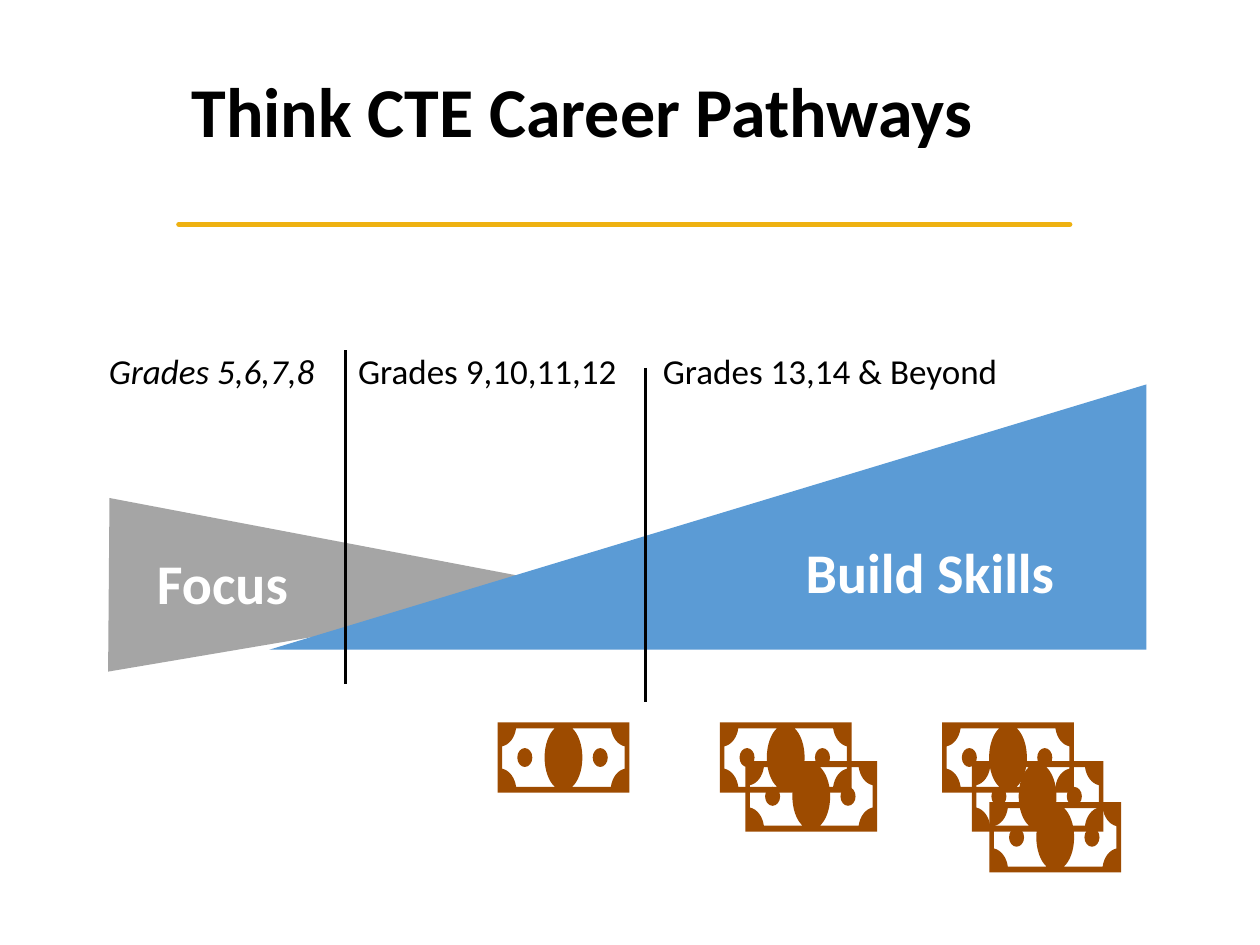
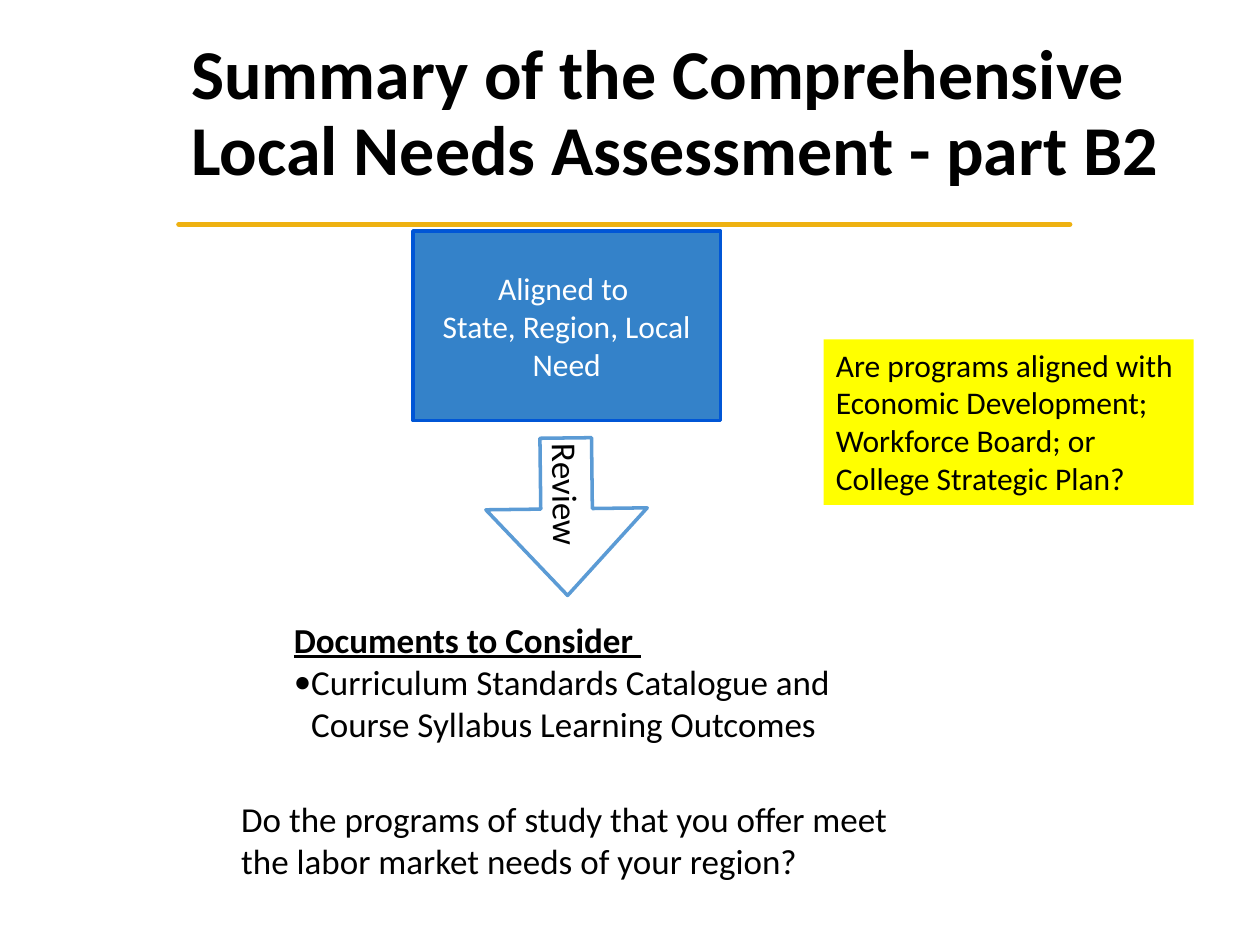
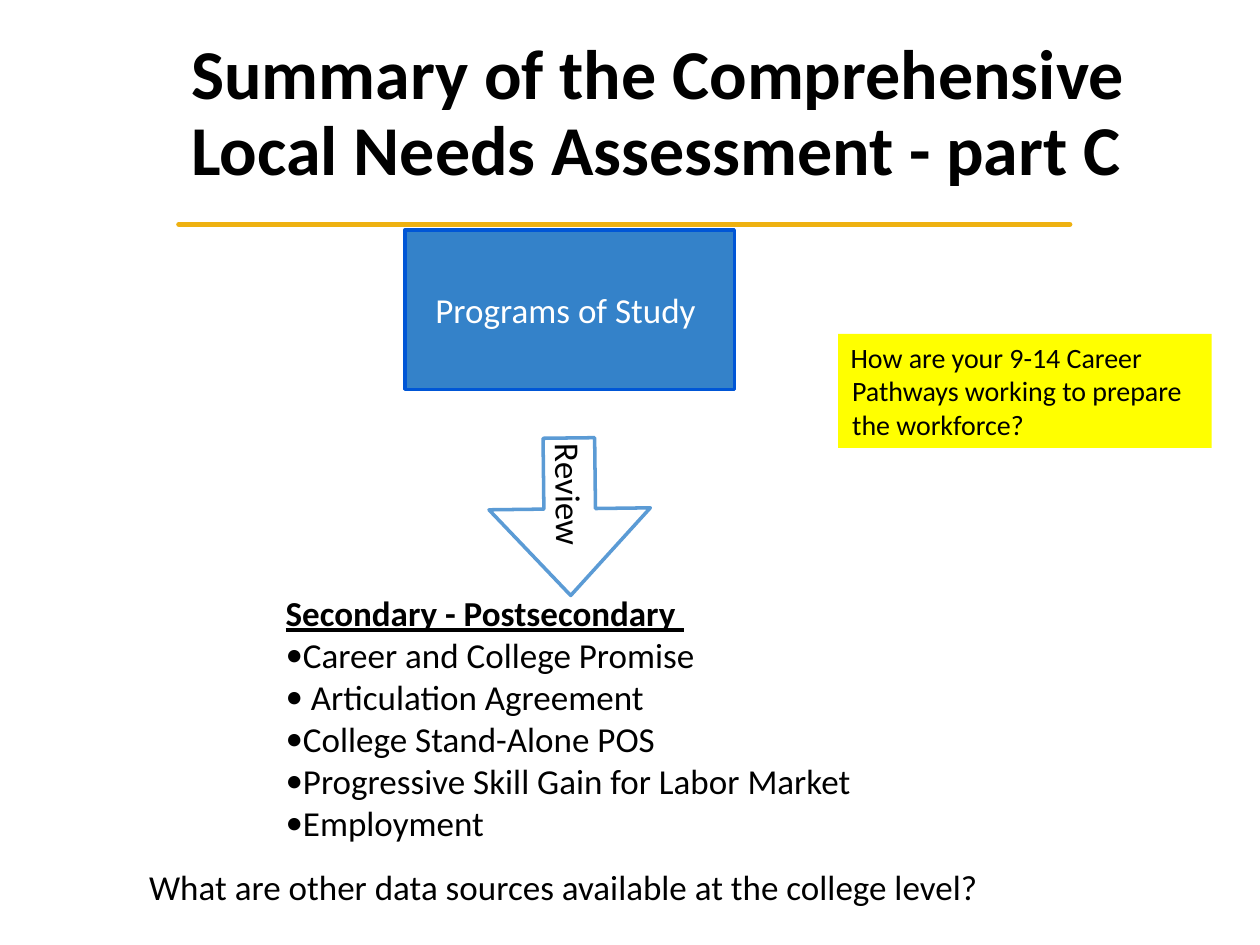
from lxml import etree
from pptx import Presentation
from pptx.dml.color import RGBColor
from pptx.enum.shapes import MSO_CONNECTOR, MSO_SHAPE
from pptx.enum.text import MSO_ANCHOR, PP_ALIGN
from pptx.oxml.ns import qn
from pptx.util import Pt

STRAIGHT = MSO_CONNECTOR.STRAIGHT
RECTANGLE = MSO_SHAPE.RECTANGLE
RIGHT_ARROW = MSO_SHAPE.RIGHT_ARROW
TOP, MIDDLE = MSO_ANCHOR.TOP, MSO_ANCHOR.MIDDLE
LEFT, CENTER = PP_ALIGN.LEFT, PP_ALIGN.CENTER
TITLE_ONLY = 5

COLORS = {
    "text": "000000",
    "light": "FFFFFF",
    "rule": "EEB111",
    "focus": "A5A5A5",
    "skills": "5B9BD5",
    "money": "9D4B00",
    "topic": "3482C9",
    "topic_edge": "0056D6",
    "question": "FFFF00",
}
BODY = {"name": "Calibri", "size": Pt(20), "bold": False}
TITLE = {**BODY, "size": Pt(40), "bold": True}
WEDGE_LABEL = {**BODY, "size": Pt(32), "bold": True}
HEADING = {**BODY, "bold": True, "underline": True}
SMALL = {**BODY, "size": Pt(18)}
INSETS, WIDE_INSETS = (3.2, 3.2), (7.2, 3.6)

NOTE_WIDTH, NOTE_HEIGHT = 75.2, 40.2
NOTE_STACKS = [
    [(284.4, 412.8)],
    [(411.4, 412.8), (426, 435)],
    [(538.4, 412.8), (555.3, 435), (565.4, 458.4)],
]


def color(name):
    return RGBColor.from_string(COLORS[name])


def paint(shape, fill, edge=None):
    shape.shadow.inherit = False
    shape.fill.solid()
    shape.fill.fore_color.rgb = color(fill)
    if edge:
        shape.line.color.rgb = color(edge)
        shape.line.width = Pt(2)
    else:
        shape.line.fill.background()


def set_frame(box, insets, anchor, wrap=True):
    across, down = map(Pt, insets)
    settings = {
        "word_wrap": wrap, "vertical_anchor": anchor,
        "margin_left": across, "margin_right": across,
        "margin_top": down, "margin_bottom": down,
    }
    for name, value in settings.items():
        setattr(box.text_frame, name, value)


def write(para, text, look, ink="text", align=LEFT):
    para.alignment = align
    span = para.add_run()
    span.text = text
    for name, value in look.items():
        setattr(span.font, name, value)
    span.font.color.rgb = color(ink)


def hang(para, indent):
    properties = para._p.get_or_add_pPr()
    properties.set("marL", str(Pt(indent)))
    properties.set("indent", str(-Pt(indent)))
    return properties


def add_text(page, area, text, look=BODY, ink="text", insets=INSETS, anchor=MIDDLE, wrap=True):
    box = page.shapes.add_textbox(*map(Pt, area))
    set_frame(box, insets, anchor, wrap)
    write(box.text_frame.paragraphs[0], text, look, ink)
    return box


def add_list(page, area, heading, items, indent):
    box = add_text(page, area, heading, HEADING)
    for item in items:
        para = box.text_frame.add_paragraph()
        properties = hang(para, indent)
        etree.SubElement(properties, qn("a:buFont")).set("typeface", "Calibri")
        etree.SubElement(properties, qn("a:buChar")).set("char", "•")
        write(para, item, BODY)


def add_topic(page, area, lines, look):
    box = page.shapes.add_shape(RECTANGLE, *map(Pt, area))
    paint(box, "topic", "topic_edge")
    set_frame(box, INSETS, MIDDLE)
    frame = box.text_frame
    for index, line in enumerate(lines):
        para = frame.add_paragraph() if index else frame.paragraphs[0]
        write(para, line, look, "light", CENTER)


def add_question(page, area, text, look, indent=0):
    box = page.shapes.add_shape(RECTANGLE, *map(Pt, area))
    paint(box, "question")
    set_frame(box, WIDE_INSETS, TOP)
    para = box.text_frame.paragraphs[0]
    if indent:
        hang(para, indent)
    write(para, text, look)


def add_review_arrow(page, left):
    arrow = page.shapes.add_shape(RIGHT_ARROW, Pt(left), Pt(249.2), Pt(90), Pt(92.2))
    arrow.rotation = 89.3
    arrow.adjustments[0] = 0.32
    arrow.adjustments[1] = 0.55
    paint(arrow, "light", "skills")
    set_frame(arrow, INSETS, MIDDLE)
    write(arrow.text_frame.paragraphs[0], "Review", BODY)


def add_line(page, start, end, ink, width, cap="flat"):
    line = page.shapes.add_connector(STRAIGHT, *map(Pt, start + end))
    line.line.color.rgb = color(ink)
    line.line.width = Pt(width)
    properties = line._element.spPr
    properties.find(qn("a:ln")).set("cap", cap)
    etree.SubElement(properties, qn("a:effectLst"))


def add_outline(page, contours, fill):
    builder = None
    for contour in contours:
        points = [(Pt(x), Pt(y)) for x, y, *_ in contour]
        if builder is None:
            builder = page.shapes.build_freeform(*points[0])
        else:
            builder.move_to(*points[0])
        builder.add_line_segments(points[1:], close=True)
    shape = builder.convert_to_shape()
    paint(shape, fill)
    bend(shape, [len(point) > 2 for contour in contours for point in contour[1:]])


def bend(shape, curved):
    segments = list(shape._element.iter(qn("a:lnTo")))
    controls = [segment for segment, flag in zip(segments, curved) if flag]
    for first in range(0, len(controls), 3):
        curve = etree.Element(qn("a:cubicBezTo"))
        controls[first].addprevious(curve)
        for segment in controls[first:first + 3]:
            curve.append(segment[0])
            segment.getparent().remove(segment)


def curve(*points):
    return [(x, y, "curve") for x, y in points]


def oval(x, y, across, down):
    reach, rise = across * 0.55, down * 0.55
    return [(x, y - down)] + curve(
        (x - reach, y - down), (x - across, y - rise), (x - across, y),
        (x - across, y + rise), (x - reach, y + down), (x, y + down),
        (x + reach, y + down), (x + across, y + rise), (x + across, y),
        (x + across, y - rise), (x + reach, y - down), (x, y - down))


def note_contours():
    edge = [(0, 0), (0, NOTE_HEIGHT), (NOTE_WIDTH, NOTE_HEIGHT), (NOTE_WIDTH, 0)]
    window = [(10.5, 3.4), (32.6, 3.4)]
    window += curve((29.2, 6.4), (26.8, 12.8), (26.8, 20.1),
                    (26.8, 27.4), (29.2, 33.8), (32.6, 36.8))
    window += [(10.5, 36.8)]
    window += curve((9.8, 31.6), (6.7, 27.4), (2.6, 26.5))
    window += [(2.6, 13.7)]
    window += curve((6.7, 12.8), (9.8, 8.6), (10.5, 3.4))
    mirrored = [(NOTE_WIDTH - x, *rest) for x, *rest in window]
    return [edge, window, mirrored, oval(15.5, 20.1, 4.3, 5.4), oval(58.6, 20.1, 4.3, 5.4)]


def add_note(page, left, top):
    contours = [[(left + x, top + y, *kind) for x, y, *kind in contour]
                for contour in note_contours()]
    add_outline(page, contours, "money")


def add_page(deck, title):
    page = deck.slides.add_slide(deck.slide_layouts[TITLE_ONLY])
    box = page.shapes.title
    area = {"left": 102.2, "top": 13.3, "width": 579.6, "height": 104.4}
    for name, value in area.items():
        setattr(box, name, Pt(value))
    set_frame(box, WIDE_INSETS, MIDDLE)
    para = box.text_frame.paragraphs[0]
    para.line_spacing = 0.9
    write(para, title, TITLE)
    add_line(page, (102.2, 128.2), (611.3, 128.2), "rule", 3, "rnd")
    return page


def build_pathways(deck):
    page = add_page(deck, "Think CTE Career Pathways")
    add_outline(page, [[(338.4, 337), (61.8, 383.8), (62.6, 284.6)]], "focus")
    add_outline(page, [[(153.8, 371.3), (655, 371.3), (655, 219.7)]], "skills")
    grades = [
        (59, 125, "Grades 5,6,7,8", {**BODY, "italic": True}),
        (201.4, 154.8, "Grades 9,10,11,12", BODY),
        (375.6, 198.7, "Grades 13,14 & Beyond", BODY),
    ]
    for left, width, text, look in grades:
        add_text(page, (left, 196.6, width, 30.2), text, look, wrap=False)
    for x, top in [(197.4, 200.2), (368.8, 210.2)]:
        add_line(page, (x, top), (x, top + 190.8), "text", 1.75)
    for stack in NOTE_STACKS:
        for left, top in stack:
            add_note(page, left, top)
    for area, text in [((82.6, 309.6, 142.6, 46), "Focus"),
                       ((453.3, 303.6, 229, 46), "Build Skills")]:
        add_text(page, area, text, WEDGE_LABEL, "light", WIDE_INSETS, TOP)


def build_alignment(deck):
    page = add_page(deck, "Summary of the Comprehensive Local Needs Assessment - part B2")
    add_topic(page, (236, 132, 175.7, 108.3),
              ["Aligned to ", "State, Region, Local", "Need"], SMALL)
    add_list(page, (164.7, 350, 318.2, 78.5), "Documents to Consider ",
             ["Curriculum Standards Catalogue and Course Syllabus Learning Outcomes"], 9.9)
    add_text(page, (134.6, 452.7, 378, 54),
             "Do the programs of study that you offer meet the labor market needs of your region?")
    add_question(page, (470.6, 193.9, 211.5, 94.7),
                 "Are programs aligned with Economic Development; Workforce Board; "
                 "or College Strategic Plan?", SMALL)
    add_review_arrow(page, 278.8)


def build_programs(deck):
    page = add_page(deck, "Summary of the Comprehensive Local Needs Assessment - part C")
    add_topic(page, (231.3, 131.5, 188.3, 91), ["Programs of Study "], BODY)
    add_list(page, (160, 332.6, 330.5, 154.8), "Secondary - Postsecondary ",
             ["Career and College Promise", " Articulation Agreement",
              "College Stand-Alone POS", "Progressive Skill Gain for Labor Market",
              "Employment"], 9.4)
    add_text(page, (82, 491.5, 486.7, 30.2),
             "What are other data sources available at the college level?")
    add_question(page, (479, 190.8, 213.4, 65.2),
                 "How are your 9-14 Career Pathways working to prepare the workforce?",
                 {**BODY, "size": Pt(16)}, 0.9)
    add_review_arrow(page, 280.6)


def main():
    deck = Presentation()
    deck.slide_width, deck.slide_height = Pt(720), Pt(540)
    build_pathways(deck)
    build_alignment(deck)
    build_programs(deck)
    deck.save("out.pptx")


if __name__ == "__main__":
    main()
